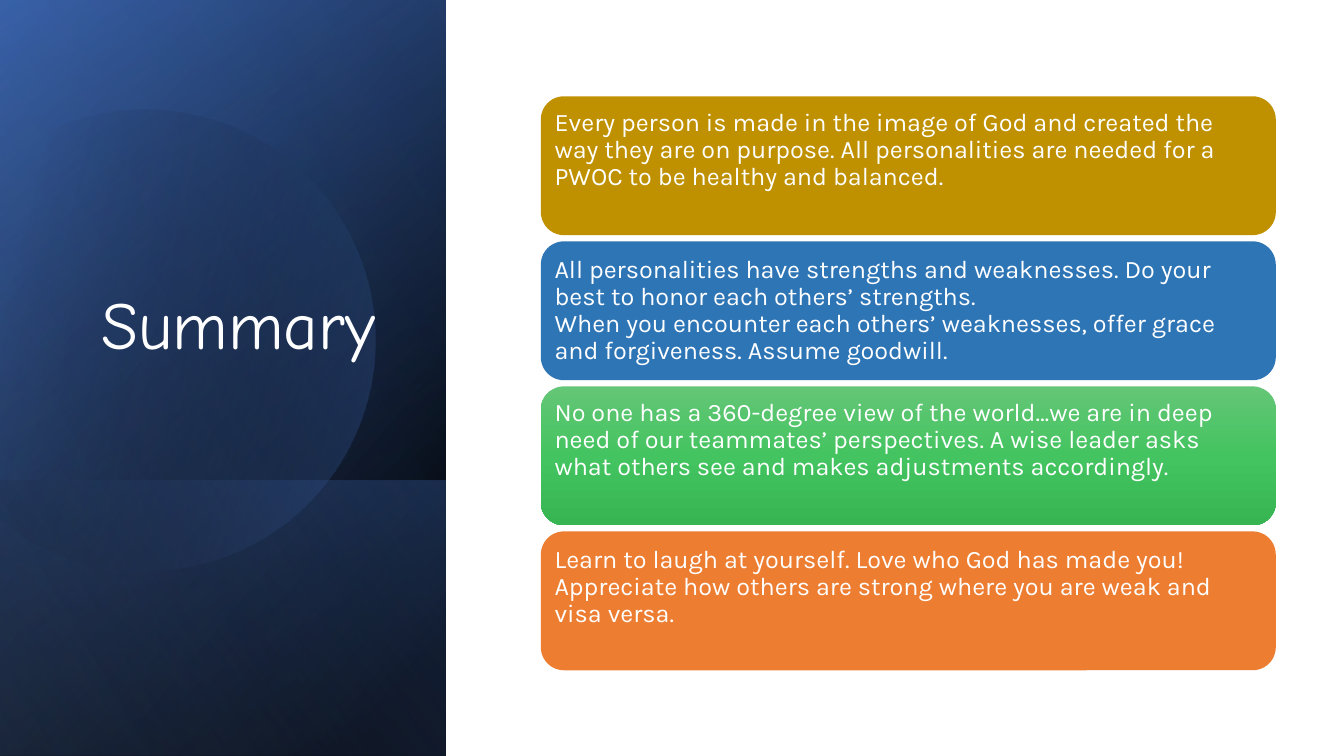
from dataclasses import dataclass
from math import acos, degrees

from lxml.etree import SubElement
from pptx import Presentation
from pptx.dml.color import RGBColor
from pptx.enum.shapes import MSO_SHAPE
from pptx.enum.text import MSO_ANCHOR, PP_ALIGN
from pptx.oxml import parse_xml
from pptx.oxml.ns import nsdecls, qn
from pptx.util import Pt

WHITE = "FFFFFF"
PANEL_W = 318.5
CARD_X, CARD_Y, CARD_W, CARD_H, CARD_PITCH = 386.3, 68.8, 525, 99.2, 103.6


@dataclass
class Stop:
    pos: float
    color: str
    opacity: float = 100


@dataclass
class Gradient:
    angle: float
    stops: list[Stop]


@dataclass
class Panel:
    top: float
    height: float
    fill: Gradient


@dataclass
class Card:
    fill: str | Gradient
    paragraphs: list[str]
    space_below: float = 0


BACK_PANELS = [
    Panel(0, 540, Gradient(50, [Stop(8, "000000"), Stop(100, "2F5597")])),
    Panel(0, 540, Gradient(30, [Stop(0, "000000", 0), Stop(99, "4472C4", 46)])),
    Panel(343, 197, Gradient(130, [Stop(2, "4472C4", 29), Stop(100, "000000", 30)])),
]
DISC_FILL = Gradient(30, [Stop(29, "000000", 0), Stop(100, "4472C4", 43)])
FRONT_PANEL = Panel(0, 540, Gradient(120, [Stop(0, "000000", 0), Stop(99, "8FAADC", 11)]))

CARDS = [
    Card("BF9000", ["Every person is made in the image of God and created the way they are "
                    "on purpose. All personalities are needed for a PWOC to be healthy and "
                    "balanced."], 22),
    Card("2E75B6", ["All personalities have strengths and weaknesses. Do your best to honor "
                    "each others’ strengths.",
                    "When you encounter each others’ weaknesses, offer grace and forgiveness. "
                    "Assume goodwill."]),
    Card(Gradient(90, [Stop(0, "64C677"), Stop(50, "44C460"), Stop(100, "36B552")]),
         ["No one has a 360-degree view of the world…we are in deep need of our teammates’ "
          "perspectives. A wise leader asks what others see and makes adjustments "
          "accordingly."], 22),
    Card("ED7D31", ["Learn to laugh at yourself. Love who God has made you! Appreciate how "
                    "others are strong where you are weak and visa versa."], 19.5),
]


def rgb(color: str) -> RGBColor:
    return RGBColor.from_string(color)


def paint(s, fill: str | Gradient) -> None:
    """Fill a shape and take away its line and shadow."""
    s.shadow.inherit = False
    s.line.fill.background()
    if isinstance(fill, str):
        s.fill.solid()
        s.fill.fore_color.rgb = rgb(fill)
        return
    grad = parse_xml(f'<a:gradFill {nsdecls("a")} rotWithShape="1"/>')
    stops = SubElement(grad, qn("a:gsLst"))
    for stop in fill.stops:
        gs = SubElement(stops, qn("a:gs"), pos=str(int(stop.pos * 1000)))
        clr = SubElement(gs, qn("a:srgbClr"), val=stop.color)
        if stop.opacity < 100:
            SubElement(clr, qn("a:alpha"), val=str(int(stop.opacity * 1000)))
    SubElement(grad, qn("a:lin"), ang=str(int(fill.angle * 60000)), scaled="0")
    s._element.spPr.insert(2, grad)


def add_panel(slide, panel: Panel) -> None:
    """Draw a panel at the left edge, turned a quarter so that its gradient turns too."""
    mid_x, mid_y = PANEL_W / 2, panel.top + panel.height / 2
    s = slide.shapes.add_shape(MSO_SHAPE.RECTANGLE,
                               Pt(mid_x - panel.height / 2), Pt(mid_y - PANEL_W / 2),
                               Pt(panel.height), Pt(PANEL_W))
    s.rotation = 90
    s._element.spPr.find(qn("a:xfrm")).set("flipH", "1")
    paint(s, panel.fill)


def add_disc(slide, x: float, y: float, radius: float, cut_x: float, tilt: float,
             fill: Gradient) -> None:
    """Draw a disc with a straight upright cut at cut_x, its gradient tilted to the left."""
    s = slide.shapes.add_shape(MSO_SHAPE.CHORD, Pt(x - radius), Pt(y - radius),
                               Pt(2 * radius), Pt(2 * radius))
    s.rotation = 360 - tilt
    half_arc = degrees(acos((cut_x - x) / radius))
    # Angles are stored in 60000ths of a degree, adjustments in 100000ths.
    s.adjustments[0] = (360 - half_arc + tilt) * 0.6
    s.adjustments[1] = (half_arc + tilt) * 0.6
    paint(s, fill)


def write(tf, paragraphs: list[str], font: str, size: float, align: PP_ALIGN) -> None:
    tf.word_wrap = True
    for i, text in enumerate(paragraphs):
        p = tf.add_paragraph() if i else tf.paragraphs[0]
        p.alignment = align
        p.line_spacing = 0.9
        r = p.add_run()
        r.text = text
        r.font.name = font
        r.font.size = Pt(size)
        r.font.color.rgb = rgb(WHITE)


def add_title(slide, text: str) -> None:
    tf = slide.shapes.add_textbox(Pt(46), Pt(132.5), Pt(245.5), Pt(188.5)).text_frame
    tf.vertical_anchor = MSO_ANCHOR.BOTTOM
    tf.margin_right, tf.margin_bottom = Pt(23.4), Pt(61)
    write(tf, [text], "Comic Neue", 48, PP_ALIGN.RIGHT)


def add_card(slide, card: Card, top: float) -> None:
    s = slide.shapes.add_shape(MSO_SHAPE.ROUNDED_RECTANGLE,
                               Pt(CARD_X), Pt(top), Pt(CARD_W), Pt(CARD_H))
    paint(s, card.fill)
    tf = s.text_frame
    tf.vertical_anchor = MSO_ANCHOR.MIDDLE
    tf.margin_left = tf.margin_right = tf.margin_top = Pt(5)
    tf.margin_bottom = Pt(5 + card.space_below)
    write(tf, card.paragraphs, "Karla", 18, PP_ALIGN.LEFT)


def main() -> None:
    prs = Presentation()
    prs.slide_width, prs.slide_height = Pt(960), Pt(540)
    slide = prs.slides.add_slide(prs.slide_layouts[6])
    for panel in BACK_PANELS:
        add_panel(slide, panel)
    add_disc(slide, x=104, y=243, radius=164.5, cut_x=-10.8, tilt=16.1, fill=DISC_FILL)
    add_panel(slide, FRONT_PANEL)
    add_title(slide, "Summary")
    for i, card in enumerate(CARDS):
        add_card(slide, card, CARD_Y + i * CARD_PITCH)
    prs.save("out.pptx")


if __name__ == "__main__":
    main()
